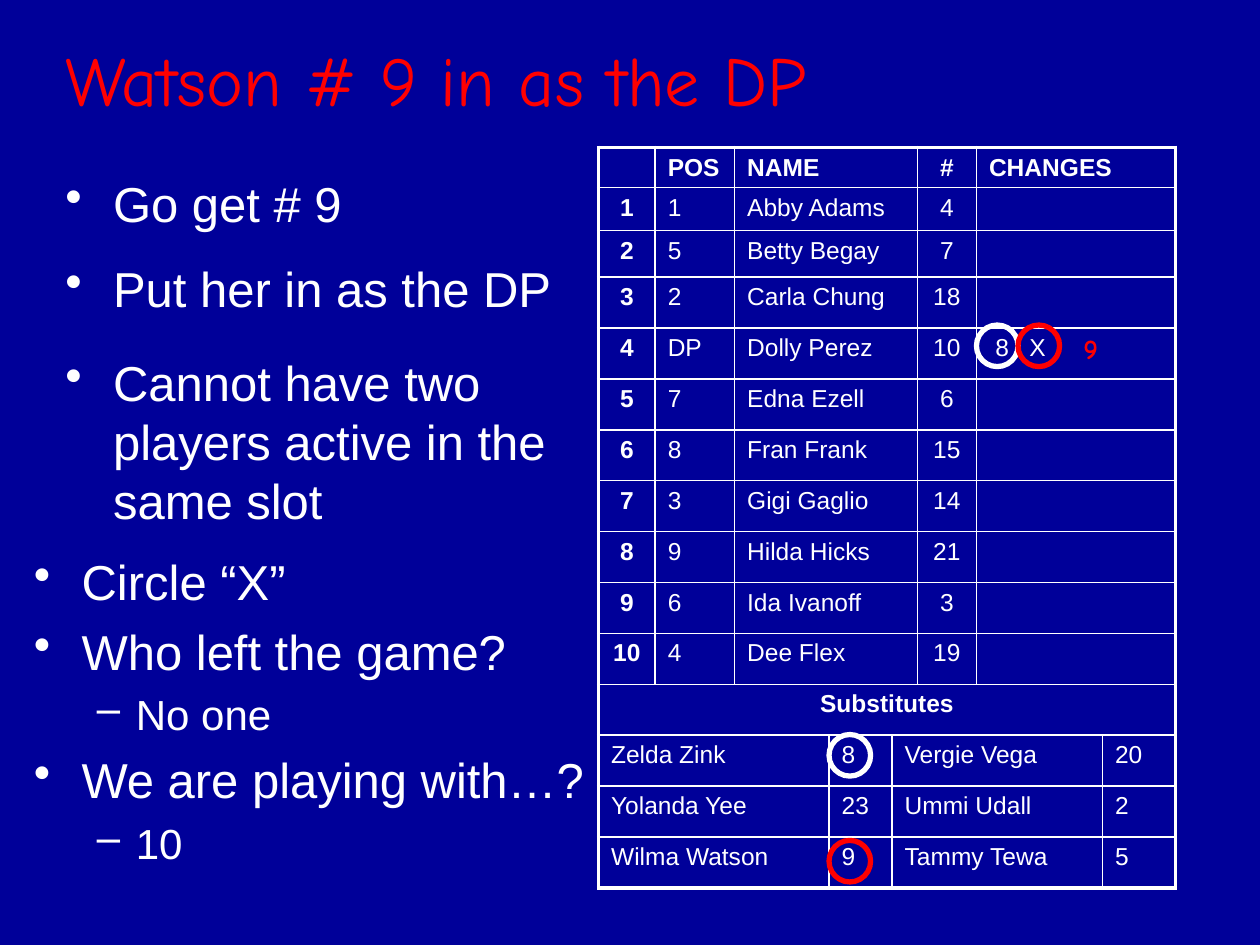
from lxml import etree
from pptx import Presentation
from pptx.dml.color import RGBColor
from pptx.enum.shapes import MSO_SHAPE
from pptx.enum.text import MSO_ANCHOR, PP_ALIGN
from pptx.oxml.ns import qn
from pptx.util import Inches, Pt

WHITE, RED, NAVY = "FFFFFF", "FF0000", "000099"
BODY_FONT, HAND_FONT = "Arial", "Comic Neue"

COLUMN_WIDTHS = [0.45, 0.63, 0.75, 0.5, 0.2, 0.47, 1, 0.58]
ROW_HEIGHTS = [0.32, 0.34, 0.37] + [4.85 / 12] * 12
# First and last grid column of each cell
PLAYER_SPANS = [(0, 0), (1, 1), (2, 4), (5, 5), (6, 7)]
BANNER_SPANS = [(0, 7)]
SUBSTITUTE_SPANS = [(0, 2), (3, 3), (4, 6), (7, 7)]

HEADINGS = ["", "POS", "NAME", "#", "CHANGES"]
PLAYERS = [
    ("1", "Abby Adams", "4", ""),
    ("5", "Betty Begay", "7", ""),
    ("2", "Carla Chung", "18", ""),
    ("DP", "Dolly Perez", "10", "8\tX"),
    ("7", "Edna Ezell", "6", ""),
    ("8", "Fran Frank", "15", ""),
    ("3", "Gigi Gaglio", "14", ""),
    ("9", "Hilda Hicks", "21", ""),
    ("6", "Ida Ivanoff", "3", ""),
    ("4", "Dee Flex", "19", ""),
]
SUBSTITUTES = [
    ("Zelda Zink", "8", "Vergie Vega", "20"),
    ("Yolanda Yee", "23", "Ummi Udall", "2"),
    ("Wilma Watson", "9", "Tammy Tewa", "5"),
]


def color(hex_code):
    return RGBColor.from_string(hex_code)


def style(paragraph, size, name=BODY_FONT, hex_code=WHITE, bold=False):
    font = paragraph.font
    font.size, font.name, font.bold = Pt(size), name, bold
    font.color.rgb = color(hex_code)


def add_title(slide, left, top, width, height):
    title = slide.shapes.title
    title.left, title.top = Inches(left), Inches(top)
    title.width, title.height = Inches(width), Inches(height)
    title.text_frame.text = "Watson # 9 in as the DP"
    title.text_frame.vertical_anchor = MSO_ANCHOR.MIDDLE
    heading = title.text_frame.paragraphs[0]
    heading.alignment = PP_ALIGN.LEFT
    style(heading, 40, HAND_FONT, RED)


def add_text_frame(slide, left, top, width, height):
    box = slide.shapes.add_textbox(
        Inches(left), Inches(top), Inches(width), Inches(height))
    box.text_frame.word_wrap = True
    return box.text_frame


def add_bullets(slide, left, top, width, height, items):
    """Each item is its indent level and its text."""
    frame = add_text_frame(slide, left, top, width, height)
    for index, (level, text) in enumerate(items):
        item = frame.add_paragraph() if index else frame.paragraphs[0]
        item.text, item.level = text, level
        item.space_before = Pt(5 if level else 6)
        indent, hang, mark = [(0.38, 0.38, "•"), (0.81, 0.31, "–")][level]
        properties = item._p.get_or_add_pPr()
        properties.set("marL", str(Inches(indent)))
        properties.set("indent", str(-Inches(hang)))
        etree.SubElement(properties, qn("a:buChar"), char=mark)
        style(item, 24 if level else 28)


def set_borders(cell, widths):
    properties = cell._tc.get_or_add_tcPr()
    for side, width in zip("LRTB", widths):
        line = etree.SubElement(properties, qn(f"a:ln{side}"), w=str(Pt(width)))
        fill = etree.SubElement(line, qn("a:solidFill"))
        etree.SubElement(fill, qn("a:srgbClr"), val=WHITE)


def fill_row(table, row, spans, texts, bold=(), centered=()):
    """bold and centered hold the positions of such cells in the row."""
    last_row, last_column = len(ROW_HEIGHTS) - 1, len(COLUMN_WIDTHS) - 1
    for position, ((first, last), text) in enumerate(zip(spans, texts)):
        at_edge = (first == 0, last == last_column, row == 0, row == last_row)
        for column in range(first, last + 1):
            part = table.cell(row, column)
            set_borders(part, [2.25 if edge else 1 for edge in at_edge])
            part.fill.background()
        cell = table.cell(row, first)
        if last > first:
            cell.merge(table.cell(row, last))
        cell.text = text
        cell.vertical_anchor = MSO_ANCHOR.TOP if row else MSO_ANCHOR.MIDDLE
        entry = cell.text_frame.paragraphs[0]
        if position in centered:
            entry.alignment = PP_ALIGN.CENTER
        if "\t" in text:
            cell.margin_left = Inches(0.15)
            stops = etree.SubElement(entry._p.get_or_add_pPr(), qn("a:tabLst"))
            etree.SubElement(stops, qn("a:tab"), pos=str(Inches(0.27)), algn="l")
        style(entry, 14, bold=position in bold)


def add_lineup(slide, left, top):
    table = slide.shapes.add_table(
        len(ROW_HEIGHTS), len(COLUMN_WIDTHS), Inches(left), Inches(top),
        Inches(sum(COLUMN_WIDTHS)), Inches(sum(ROW_HEIGHTS))).table
    table.first_row = table.horz_banding = False
    for column, width in zip(table.columns, COLUMN_WIDTHS):
        column.width = Inches(width)
    for row, height in zip(table.rows, ROW_HEIGHTS):
        row.height = Inches(height)

    # Batting order
    fill_row(table, 0, PLAYER_SPANS, HEADINGS, bold=range(5), centered=[3])
    for slot, player in enumerate(PLAYERS, 1):
        fill_row(table, slot, PLAYER_SPANS, (str(slot), *player),
                 bold=[0], centered=[0, 3])

    # Substitutes
    banner_row = len(PLAYERS) + 1
    fill_row(table, banner_row, BANNER_SPANS, ["Substitutes"], bold=[0], centered=[0])
    for row, substitutes in enumerate(SUBSTITUTES, banner_row + 1):
        fill_row(table, row, SUBSTITUTE_SPANS, substitutes)


def add_circle(slide, left, top, hex_code):
    circle = slide.shapes.add_shape(
        MSO_SHAPE.OVAL, Inches(left), Inches(top), Inches(0.33), Inches(0.33))
    circle.shadow.inherit = False
    circle.fill.background()
    circle.line.color.rgb = color(hex_code)
    circle.line.width = Pt(3)


def add_marks(slide, left, top):
    # New number written in the changes column
    frame = add_text_frame(slide, left + 3.75, top + 1.41, 0.33, 0.41)
    number = frame.paragraphs[0]
    number.text = "9"
    number.space_before = Pt(2)
    style(number, 16, HAND_FONT, RED, bold=True)

    # White for the earlier change, red for the new one
    for x, y, hex_code in [(1.83, 5.5, RED), (3, 1.41, WHITE),
                           (1.83, 4.66, WHITE), (3.33, 1.41, RED)]:
        add_circle(slide, left + x, top + y, hex_code)


def main():
    presentation = Presentation()
    presentation.slide_width, presentation.slide_height = Inches(10), Inches(7.5)
    slide = presentation.slides.add_slide(presentation.slide_layouts[5])
    slide.background.fill.solid()
    slide.background.fill.fore_color.rgb = color(NAVY)

    add_lineup(slide, 4.75, 1.17)
    add_title(slide, 0.42, 0.25, 8.5, 0.75)

    # Steps for the substitution
    add_bullets(slide, 0.42, 1.33, 4.17, 0.67, [(0, "Go get # 9")])
    add_bullets(slide, 0.42, 2, 4.17, 0.67, [(0, "Put her in as the DP")])
    add_bullets(slide, 0.42, 2.75, 4.17, 1.5,
                [(0, "Cannot have two players active in the same slot")])
    add_bullets(slide, 0.17, 4.33, 4.67, 2.58, [
        (0, "Circle “X”"),
        (0, "Who left the game?"),
        (1, "No one"),
        (0, "We are playing with…?"),
        (1, "10"),
    ])
    add_marks(slide, 4.75, 1.17)
    presentation.save("out.pptx")


if __name__ == "__main__":
    main()
